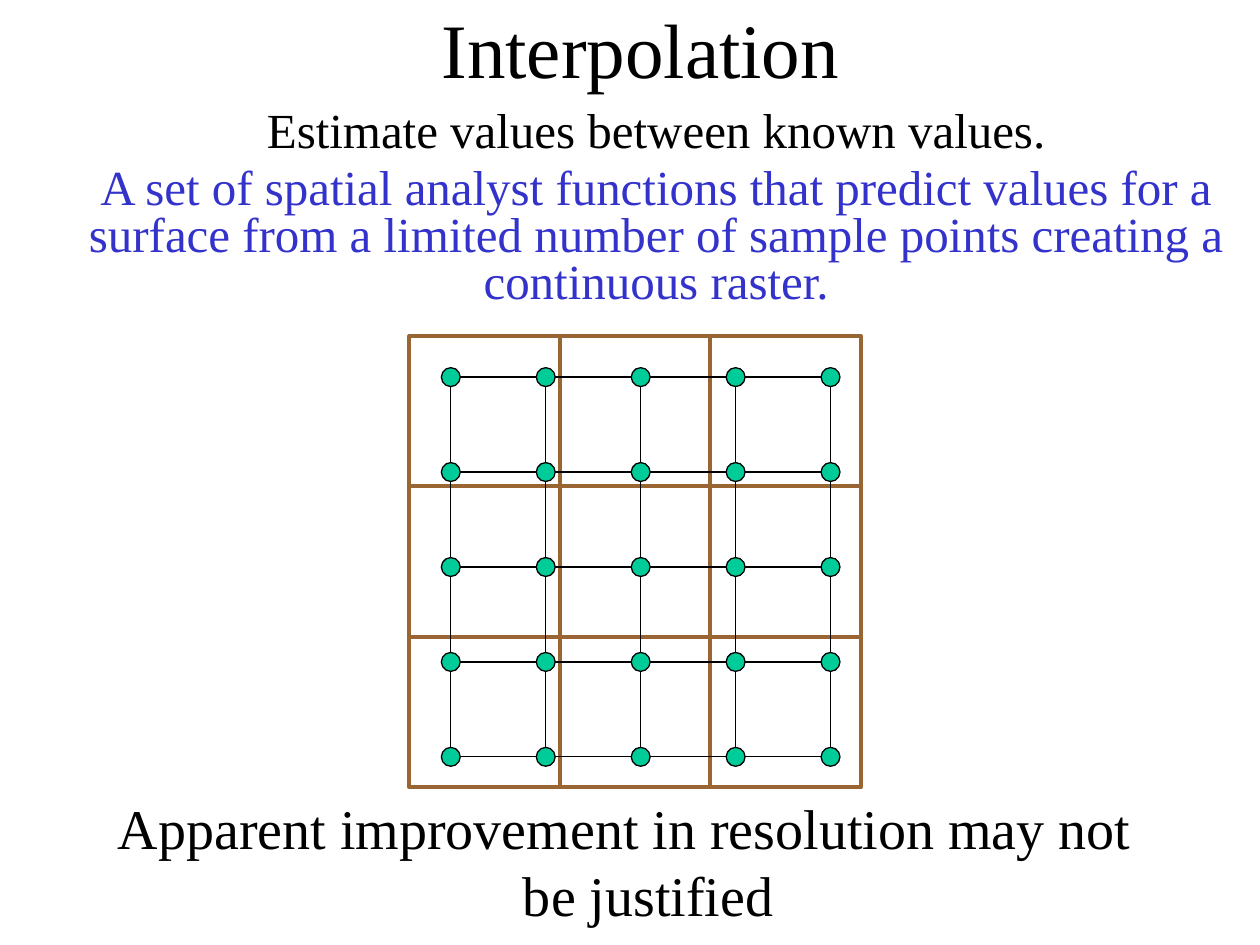
from itertools import product

from pptx import Presentation
from pptx.dml.color import RGBColor
from pptx.enum import shapes, text
from pptx.util import Pt

BLACK = RGBColor(0x00, 0x00, 0x00)
BLUE = RGBColor(0x33, 0x33, 0xCC)
BROWN = RGBColor(0x99, 0x66, 0x33)
GREEN = RGBColor(0x00, 0xCC, 0x99)
FONT = "Times New Roman"


def place(shape, box):
    shape.left, shape.top, shape.width, shape.height = map(Pt, box)


def write(para, words, size, color):
    para.alignment = text.PP_ALIGN.CENTER
    run = para.add_run()
    run.text = words
    run.font.name = FONT
    run.font.size = Pt(size)
    run.font.color.rgb = color


def add_title(slide, box):
    title = slide.shapes.title
    place(title, box)
    frame = title.text_frame
    frame.vertical_anchor = text.MSO_ANCHOR.MIDDLE
    write(frame.paragraphs[0], "Interpolation", 44, BLACK)


def add_frame(slide, box):
    frame = slide.shapes.add_textbox(*map(Pt, box)).text_frame
    frame.word_wrap = True
    return frame


def add_body(slide, box):
    frame = add_frame(slide, box)
    lines = [
        ("Estimate values between known values.", BLACK),
        ("A set of spatial analyst functions that predict values for a "
         "surface from a limited number of sample points creating a "
         "continuous raster.", BLUE),
    ]
    for i, (words, color) in enumerate(lines):
        para = frame.add_paragraph() if i else frame.paragraphs[0]
        para.line_spacing = 0.8
        para.space_before = Pt(5.6)
        write(para, words, 28, color)


def add_note(slide, box):
    para = add_frame(slide, box).paragraphs[0]
    para.space_before = Pt(6.4)
    props = para._p.get_or_add_pPr()
    props.set("marL", str(Pt(27)))
    props.set("indent", str(-Pt(27)))
    write(para, "Apparent improvement in resolution may not be justified",
          32, BLACK)


def add_mark(group, kind, box, line, width, fill=None):
    mark = group.shapes.add_shape(kind, *map(Pt, box))
    mark.shadow.inherit = False
    mark.line.color.rgb = line
    mark.line.width = Pt(width)
    if fill is None:
        mark.fill.background()
    else:
        mark.fill.solid()
        mark.fill.fore_color.rgb = fill


def add_grid(group, box, count, line, width):
    left, top, wide, high = box
    w, h = wide / count, high / count
    for row, col in product(range(count), repeat=2):
        cell = (left + col * w, top + row * h, w, h)
        add_mark(group, shapes.MSO_SHAPE.RECTANGLE, cell, line, width)


def add_dots(group, box, count, size):
    left, top, wide, high = box
    for row, col in product(range(count + 1), repeat=2):
        x = left + col * wide / count - size / 2
        y = top + row * high / count - size / 2
        add_mark(group, shapes.MSO_SHAPE.OVAL, (x, y, size, size),
                 BLACK, 0.75, GREEN)


def add_coarse(slide, box):
    add_grid(slide.shapes.add_group_shape(), box, 3, BROWN, 2.25)


def add_fine(slide, box):
    group = slide.shapes.add_group_shape()
    add_grid(group, box, 4, BLACK, 0.75)
    add_dots(group, box, 4, 10.8)


def main():
    deck = Presentation()
    deck.slide_width, deck.slide_height = Pt(720), Pt(540)
    slide = deck.slides.add_slide(deck.slide_layouts[5])
    add_title(slide, (60, -6, 612, 66))
    add_body(slide, (30, 60, 690, 84))
    add_coarse(slide, (234, 192, 258, 258))
    add_fine(slide, (257.6, 215.5, 217, 217))
    add_note(slide, (48, 450, 618, 90))
    deck.save("out.pptx")


if __name__ == "__main__":
    main()
